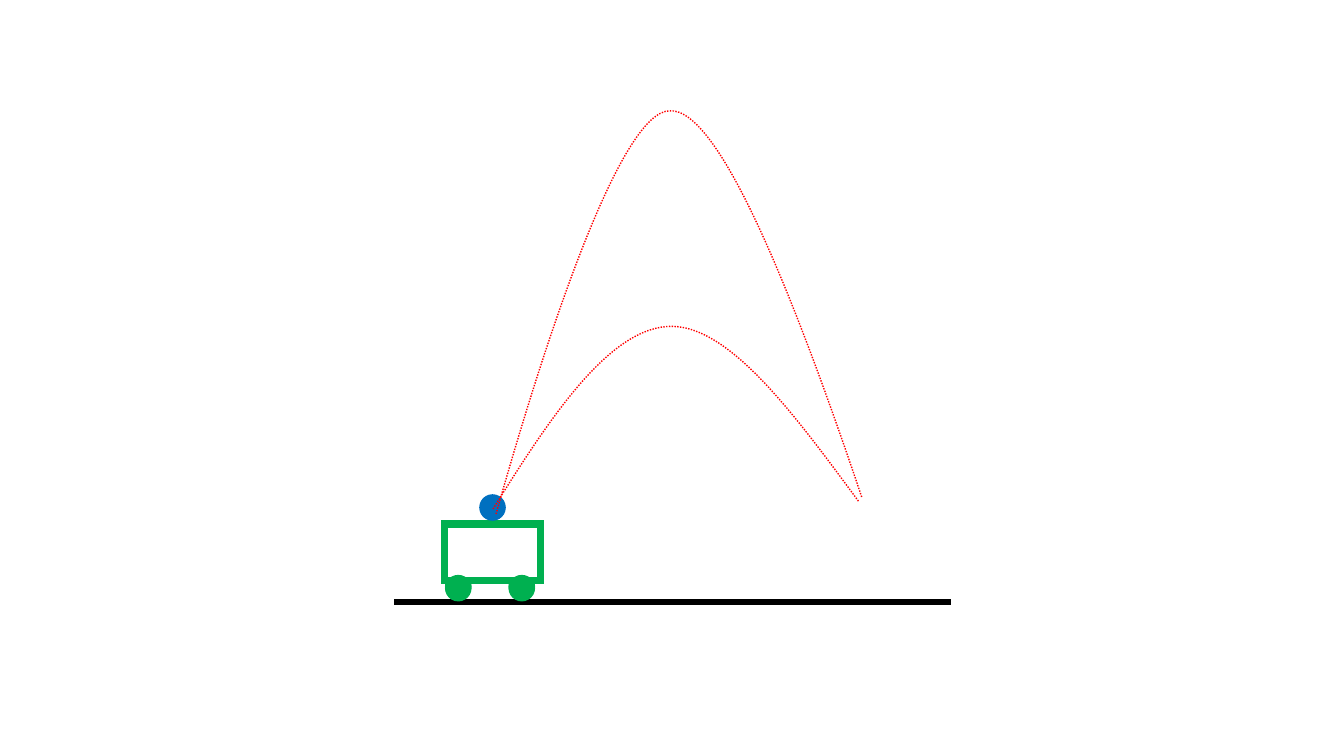
from dataclasses import dataclass

from lxml.etree import SubElement
from pptx import Presentation
from pptx.dml.color import RGBColor
from pptx.enum.dml import MSO_LINE_DASH_STYLE as Dash
from pptx.enum.shapes import MSO_CONNECTOR as Connector, MSO_SHAPE as Shape
from pptx.oxml.ns import qn
from pptx.shapes.autoshape import Shape as AutoShape
from pptx.shapes.shapetree import GroupShapes, SlideShapes
from pptx.util import Inches, Pt

BLACK = RGBColor(0x00, 0x00, 0x00)
WHITE = RGBColor(0xFF, 0xFF, 0xFF)
RED = RGBColor(0xFF, 0x00, 0x00)
GREEN = RGBColor(0x00, 0xB0, 0x50)
BLUE = RGBColor(0x00, 0x70, 0xC0)

CELL = Inches(0.1)
BODY_WIDTH, BODY_HEIGHT = 9.5, 5.5
DISC = 2.5
THICK, THIN = 4.5, 1
CART_COL = 44.1
BACK_CART_ROW, FRONT_CART_ROW = 51.9, 52.1
WHEEL_COLS = (44.2, 50.5)
WHEEL_DROP = 5
BALL_COL, BALL_ROW = 47.6, 49.1


@dataclass(frozen=True)
class Flight:
    points: tuple[tuple[float, float], ...]


FLIGHTS = (
    Flight(((48.9, 50.5), (54.5, 41.5), (60.2, 32.9), (66.1, 32.4),
            (72.1, 31.9), (78.7, 41), (85.2, 49.8))),
    Flight(((49.2, 51), (54.8, 31.1), (61.8, 11.1), (66.4, 11),
            (71.4, 10.6), (79, 30.1), (85.5, 49.4))),
)


def grid(cells: float) -> int:
    return round(cells * CELL)


def add_solid(shapes: SlideShapes | GroupShapes, kind: Shape, col: float, row: float,
              width: float, height: float, fill: RGBColor, line: RGBColor,
              weight: float) -> None:
    sp = shapes.add_shape(kind, grid(col), grid(row), grid(width), grid(height))
    sp.shadow.inherit = False
    sp.fill.solid()
    sp.fill.fore_color.rgb = fill
    sp.line.color.rgb = line
    sp.line.width = Pt(weight)
    SubElement(sp.element.spPr.find(qn("a:ln")), qn("a:miter"), lim="800000")


def add_disc(shapes: SlideShapes | GroupShapes, col: float, row: float,
             color: RGBColor) -> None:
    add_solid(shapes, Shape.OVAL, col, row, DISC, DISC, color, color, THIN)


def add_cart(shapes: SlideShapes, row: float) -> None:
    group = shapes.add_group_shape().shapes
    add_solid(group, Shape.RECTANGLE, CART_COL, row, BODY_WIDTH, BODY_HEIGHT,
              WHITE, GREEN, THICK)
    for col in WHEEL_COLS:
        add_disc(group, col, row + WHEEL_DROP, GREEN)


def bend_segments(sp: AutoShape) -> None:
    path = sp.element.find(".//" + qn("a:path"))
    segments = path.findall(qn("a:lnTo"))
    for first in range(0, len(segments), 3):
        curve = SubElement(path, qn("a:cubicBezTo"))
        for segment in segments[first:first + 3]:
            curve.append(segment[0])
            path.remove(segment)


def add_flight(shapes: SlideShapes, flight: Flight) -> None:
    start, *rest = [(grid(x), grid(y)) for x, y in flight.points]
    builder = shapes.build_freeform(*start)
    builder.add_line_segments(rest, close=False)
    sp = builder.convert_to_shape()
    bend_segments(sp)
    sp.shadow.inherit = False
    sp.fill.background()
    sp.line.color.rgb = RED
    sp.line.width = Pt(THIN)
    sp.line.dash_style = Dash.ROUND_DOT


def add_ground(shapes: SlideShapes) -> None:
    ground = shapes.add_connector(Connector.STRAIGHT, grid(39.1), grid(59.7),
                                  grid(94.3), grid(59.7))
    ground.line.color.rgb = BLACK
    ground.line.width = Pt(THICK)
    SubElement(ground.element.spPr, qn("a:effectLst"))


def main() -> None:
    prs = Presentation()
    prs.slide_width, prs.slide_height = Inches(13.33), Inches(7.5)
    s = prs.slides.add_slide(prs.slide_layouts[6])
    add_ground(s.shapes)
    add_cart(s.shapes, BACK_CART_ROW)
    add_disc(s.shapes, BALL_COL, BALL_ROW, BLUE)
    add_cart(s.shapes, FRONT_CART_ROW)
    for flight in FLIGHTS:
        add_flight(s.shapes, flight)
    prs.save("out.pptx")


if __name__ == "__main__":
    main()
